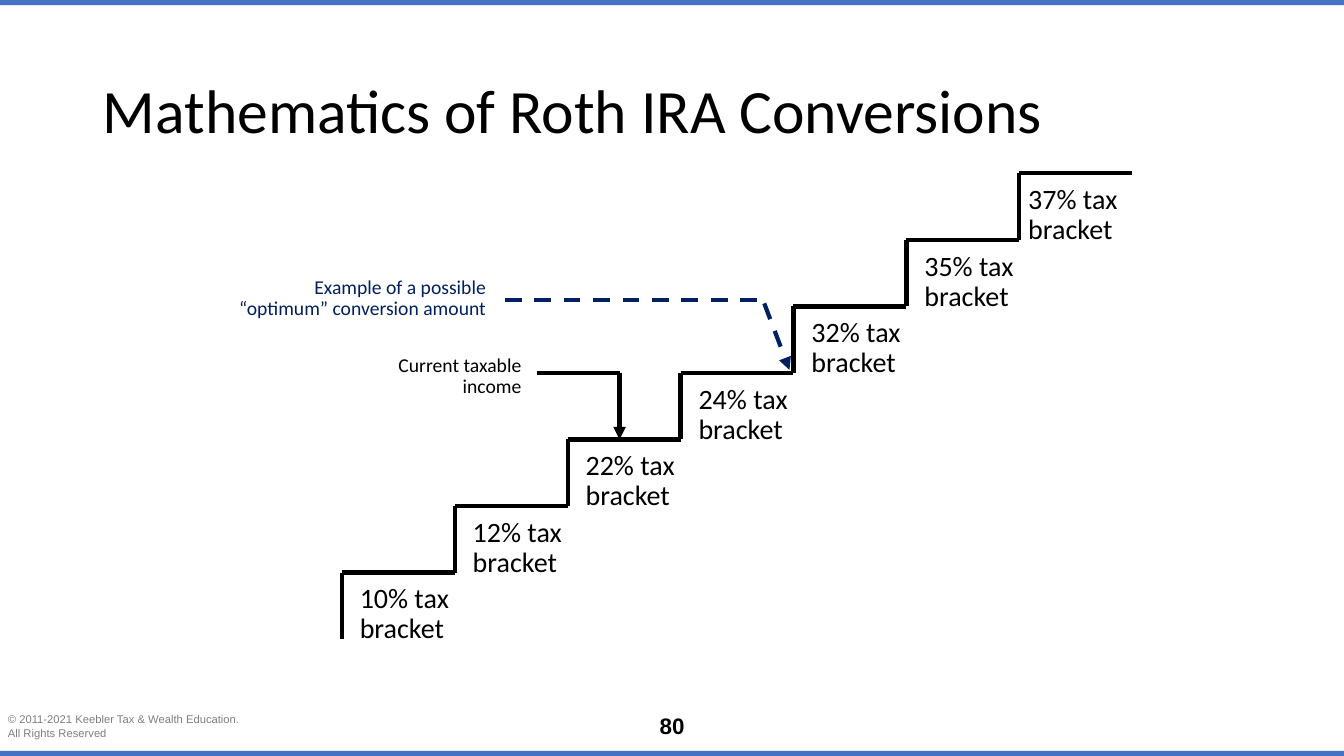
from lxml import etree
from pptx import Presentation
from pptx import util as u
from pptx.dml.color import RGBColor
from pptx.enum import dml, shapes, text
from pptx.oxml.ns import qn

SLIDE_W, SLIDE_H = 13.33, 7.5
BLACK, NAVY, BLUE, GREY = "000000", "002060", "4472C4", "7F7F7F"
BRACKETS = ["10%", "12%", "22%", "24%", "32%", "35%", "37%"]
TREAD, RISER = 1.12, 0.66
STAIR_LEFT, STAIR_BOTTOM = 3.39, 6.34


def color(hex_string):
    return RGBColor.from_string(hex_string)


def add_line(slide, start, end, ink=BLACK, dashed=False, arrow=False):
    line = slide.shapes.add_connector(
        shapes.MSO_CONNECTOR.STRAIGHT, *(u.Inches(v) for v in (*start, *end)))
    line.line.color.rgb = color(ink)
    line.line.width = u.Pt(3)
    if dashed:
        line.line.dash_style = dml.MSO_LINE.DASH
    if arrow:
        etree.SubElement(line.line._get_or_add_ln(), qn("a:tailEnd"), type="triangle")
    etree.SubElement(line._element.spPr, qn("a:effectLst"))


def add_text(slide, box, lines, size, ink=BLACK, font="Calibri", bold=False,
             align=text.PP_ALIGN.LEFT, spacing=0.9, wrap=True):
    frame = slide.shapes.add_textbox(*(u.Inches(v) for v in box)).text_frame
    frame.word_wrap = wrap
    frame.text = "\n".join(lines)
    for paragraph in frame.paragraphs:
        paragraph.alignment = align
        paragraph.line_spacing = spacing
        paragraph.font.name = font
        paragraph.font.size = u.Pt(size)
        paragraph.font.bold = bold
        paragraph.font.color.rgb = color(ink)


def add_frame(slide):
    """Edge bars, copyright line and page number."""
    bar_height = 0.05
    for top in (0, SLIDE_H - bar_height):
        bar = slide.shapes.add_shape(
            shapes.MSO_SHAPE.RECTANGLE, 0, u.Inches(top),
            u.Inches(SLIDE_W), u.Inches(bar_height))
        bar.shadow.inherit = False
        bar.fill.solid()
        bar.fill.fore_color.rgb = color(BLUE)
        bar.line.fill.background()
    footer_top, footer_height = 7.02, 0.37
    add_text(slide, (-0.02, footer_top, 2.55, footer_height),
             ["© 2011-2021 Keebler Tax & Wealth Education.", "All Rights Reserved"],
             8, GREY, "Arial", spacing=1, wrap=False)
    number_width = 0.75
    add_text(slide, ((SLIDE_W - number_width) / 2, footer_top, number_width, footer_height),
             ["80"], 16, font="Arial", bold=True, align=text.PP_ALIGN.CENTER, spacing=1)


def add_title(slide, box):
    title = slide.shapes.title
    title.left, title.top, title.width, title.height = (u.Inches(v) for v in box)
    frame = title.text_frame
    frame.text = "Mathematics of Roth IRA Conversions"
    frame.vertical_anchor = text.MSO_ANCHOR.MIDDLE
    frame.auto_size = text.MSO_AUTO_SIZE.NONE
    paragraph = frame.paragraphs[0]
    paragraph.alignment = text.PP_ALIGN.LEFT
    paragraph.line_spacing = 0.9
    paragraph.font.name = "Calibri"
    paragraph.font.size = u.Pt(44)
    paragraph.font.color.rgb = color(BLACK)


def stair_point(column, row):
    """Point counted in treads from the left and risers from the bottom."""
    return STAIR_LEFT + column * TREAD, STAIR_BOTTOM - row * RISER


def add_staircase(slide):
    for step, rate in enumerate(BRACKETS):
        corner = stair_point(step, step + 1)
        add_line(slide, corner, stair_point(step, step))
        add_line(slide, corner, stair_point(step + 1, step + 1))
        indent = -0.01 if step == len(BRACKETS) - 1 else 0.08
        add_text(slide, (corner[0] + indent, corner[1] + 0.07, 1.43, 0.7),
                 [f"{rate} tax bracket"], 20)


def add_callout(slide, box, label, points, ink, dashed=False):
    """Right-aligned label with a bent arrow; each pair of points is one segment."""
    add_text(slide, box, [label], 14, ink, align=text.PP_ALIGN.RIGHT)
    for index, (start, end) in enumerate(points):
        add_line(slide, start, end, ink, dashed, arrow=index == len(points) - 1)


def main():
    deck = Presentation()
    deck.slide_width, deck.slide_height = u.Inches(SLIDE_W), u.Inches(SLIDE_H)
    slide = deck.slides.add_slide(deck.slide_layouts[5])
    add_frame(slide)
    add_title(slide, (0.92, 0.4, 11.5, 1.45))
    add_staircase(slide)
    income_x, income_y = stair_point(2.46, 3)
    bend = (income_x, income_y - RISER)
    add_callout(slide, (3.84, 3.48, 1.43, 0.53), "Current taxable income",
                [((5.33, bend[1]), bend), (bend, (income_x, income_y))], BLACK)
    add_callout(slide, (2.19, 2.7, 2.73, 0.53),
                "Example of a possible “optimum” conversion amount",
                [((7.51, 2.98), (4.9, 2.98)), ((7.58, 3.01), (7.83, 3.67))],
                NAVY, dashed=True)
    deck.save("out.pptx")


if __name__ == "__main__":
    main()
